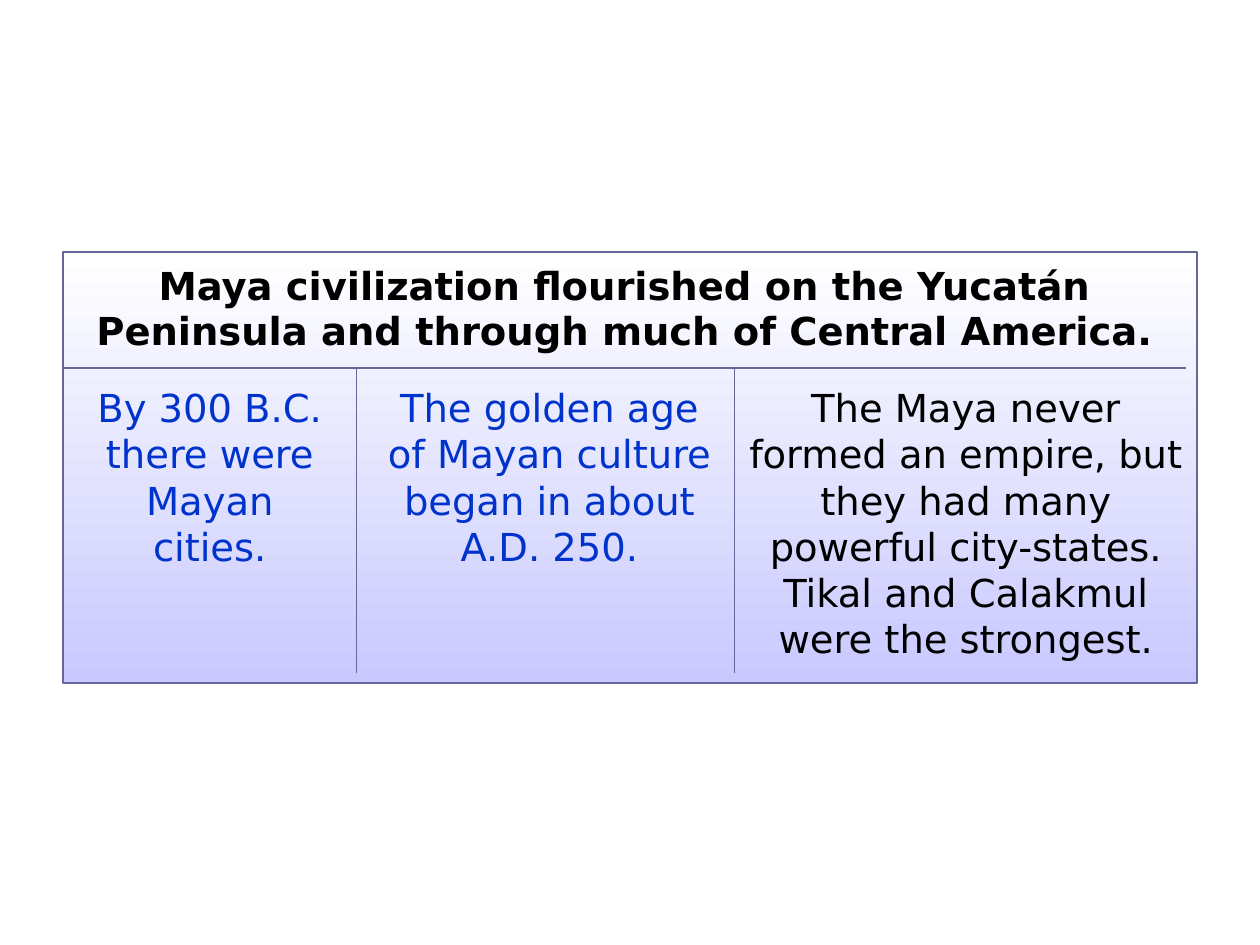
from dataclasses import dataclass

from lxml import etree
from pptx import Presentation
from pptx.dml.color import RGBColor
from pptx.enum.shapes import MSO_SHAPE
from pptx.enum.text import MSO_ANCHOR, MSO_AUTO_SIZE, PP_ALIGN
from pptx.oxml.ns import qn
from pptx.util import Inches, Pt

RECTANGLE = MSO_SHAPE.RECTANGLE
MIDDLE = MSO_ANCHOR.MIDDLE
CENTER = PP_ALIGN.CENTER
GROW = MSO_AUTO_SIZE.SHAPE_TO_FIT_TEXT

BLACK = RGBColor(0x00, 0x00, 0x00)
WHITE = RGBColor(0xFF, 0xFF, 0xFF)
BLUE = RGBColor(0x00, 0x33, 0xCC)
LAVENDER = RGBColor(0xC9, 0xC9, 0xFF)
SLATE = RGBColor(0x66, 0x66, 0x99)

FONT = "DejaVu Sans"
BLANK_LAYOUT = 6
NO_STYLE = "{2D5ABB26-0587-4C30-8999-92F81FD0307C}"
COLUMN_WIDTHS = (2.33, 3, 3.58)
ROW_HEIGHTS = (0.93, 2.42)
HEADING = ("Maya civilization flourished on the Yucatán Peninsula "
           "and through much of Central America.")
FACTS_TOP = 3


@dataclass
class Fact:
    text: str
    left: float
    width: float
    height: float
    color: RGBColor


FACTS = (
    Fact("By 300 B.C. there were Mayan cities.", 0.58, 2.17, 1.57, BLUE),
    Fact("The golden age of Mayan culture began in about A.D. 250.",
         2.9, 2.92, 1.57, BLUE),
    Fact("The Maya never formed an empire, but they had many powerful "
         "city-states. Tikal and Calakmul were the strongest.",
         5.83, 3.67, 2.3, BLACK),
)


def write_text(frame, text: str, *, color: RGBColor, bold: bool = False) -> None:
    frame.word_wrap = True
    para = frame.paragraphs[0]
    para.alignment = CENTER
    span = para.add_run()
    span.text = text
    span.font.name = FONT
    span.font.size = Pt(22)
    span.font.bold = bold
    span.font.color.rgb = color


def draw_panel(page) -> None:
    panel = page.shapes.add_shape(
        RECTANGLE, Inches(0.5), Inches(2), Inches(9), Inches(3.42))
    panel.shadow.inherit = False
    panel.fill.gradient()
    panel.fill.gradient_angle = 270
    for stop, color in zip(panel.fill.gradient_stops, (WHITE, LAVENDER)):
        stop.color.rgb = color
    panel.line.color.rgb = SLATE
    panel.line.width = Pt(1.5)


def set_borders(cell, visible: str) -> None:
    """Draw the sides named in visible (from L, R, T, B) and hide the rest."""
    properties = cell._tc.get_or_add_tcPr()
    for side in "LRTB":
        border = etree.SubElement(properties, qn(f"a:ln{side}"), w=str(Pt(1)))
        if side in visible:
            fill = etree.SubElement(border, qn("a:solidFill"))
            etree.SubElement(fill, qn("a:srgbClr"), val=str(SLATE))
        else:
            etree.SubElement(border, qn("a:noFill"))


def draw_table(page) -> None:
    frame = page.shapes.add_table(
        len(ROW_HEIGHTS), len(COLUMN_WIDTHS), Inches(0.5), Inches(1.99),
        Inches(sum(COLUMN_WIDTHS)), Inches(sum(ROW_HEIGHTS)))
    table = frame.table
    table.first_row = table.horz_banding = False
    table._tbl.tblPr.find(qn("a:tableStyleId")).text = NO_STYLE
    for column, width in zip(table.columns, COLUMN_WIDTHS):
        column.width = Inches(width)
    for row, height in zip(table.rows, ROW_HEIGHTS):
        row.height = Inches(height)

    for row, sides in zip(table.rows, (("B", "B", "B"), ("TR", "TLR", "TL"))):
        for cell, visible in zip(row.cells, sides):
            set_borders(cell, visible)
            cell.fill.background()

    heading = table.cell(0, 0)
    heading.merge(table.cell(0, len(COLUMN_WIDTHS) - 1))
    heading.vertical_anchor = MIDDLE
    write_text(heading.text_frame, HEADING, color=BLACK, bold=True)


def draw_fact(page, fact: Fact) -> None:
    box = page.shapes.add_textbox(
        Inches(fact.left), Inches(FACTS_TOP), Inches(fact.width), Inches(fact.height))
    box.text_frame.auto_size = GROW
    write_text(box.text_frame, fact.text, color=fact.color)


def main() -> None:
    deck = Presentation()
    deck.slide_width, deck.slide_height = Inches(10), Inches(7.5)
    page = deck.slides.add_slide(deck.slide_layouts[BLANK_LAYOUT])
    draw_panel(page)
    draw_table(page)
    for fact in FACTS:
        draw_fact(page, fact)
    deck.save("out.pptx")


if __name__ == "__main__":
    main()
